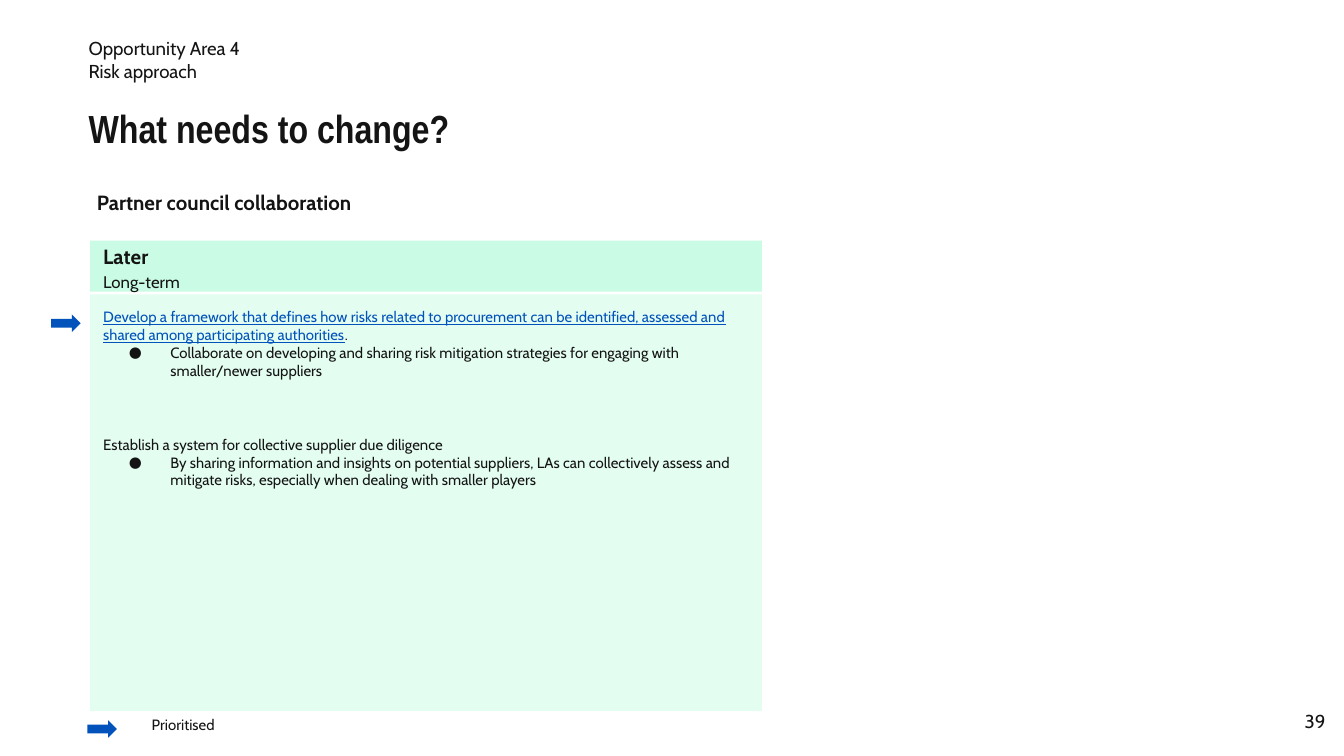
from lxml import etree
from pptx import Presentation
from pptx.dml.color import RGBColor
from pptx.enum.shapes import MSO_SHAPE as Shape
from pptx.enum.text import MSO_ANCHOR as Anchor, PP_ALIGN as Align
from pptx.oxml.ns import qn
from pptx.util import Inches, Pt

COLOURS = {"ink": "141414", "link": "0252BB", "mint": "CAFCE5"}
BODY_FONT, TITLE_FONT = "Cabin", "Arial Narrow"
ACTIONS = [
    ("Develop a framework that defines how risks related to procurement can be "
     "identified, assessed and shared among participating authorities",
     "Collaborate on developing and sharing risk mitigation strategies for "
     "engaging with smaller/newer suppliers", True),
    ("Establish a system for collective supplier due diligence",
     "By sharing information and insights on potential suppliers, LAs can "
     "collectively assess and mitigate risks, especially when dealing with "
     "smaller players", False),
]


def colour(name):
    return RGBColor.from_string(COLOURS[name])


def style(para, size, bold=False, font=BODY_FONT):
    para.font.size, para.font.bold, para.font.name = Pt(size), bold, font
    para.font.color.rgb = colour("ink")


def prepare_frame(box, side=0.1, anchor=Anchor.TOP):
    frame = box.text_frame
    frame.word_wrap = True
    frame.margin_left = frame.margin_right = Inches(side)
    frame.margin_top = frame.margin_bottom = Inches(0.1)
    frame.vertical_anchor = anchor
    return frame


def next_para(frame):
    """Return the empty first paragraph, or a new one."""
    first = frame.paragraphs[0]
    para = first if not first.runs else frame.add_paragraph()
    para.alignment = Align.LEFT
    return para


def add_text(page, left, top, width, height, lines, size, side=0,
             anchor=Anchor.TOP, align=Align.LEFT, **look):
    box = page.shapes.add_textbox(*map(Inches, (left, top, width, height)))
    frame = prepare_frame(box, side, anchor)
    for line in lines:
        para = next_para(frame)
        para.add_run().text = line
        para.alignment = align
        style(para, size, **look)


def add_block(page, kind, left, top, width, height, fill):
    block = page.shapes.add_shape(kind, *map(Inches, (left, top, width, height)))
    block.shadow.inherit = False
    block.fill.solid()
    block.fill.fore_color.rgb = colour(fill)
    block.line.fill.background()
    return block


def add_arrow(page, left, top):
    add_block(page, Shape.RIGHT_ARROW, left, top, 0.22, 0.13, "link")


def set_alpha(block, percent):
    fill = block.fill._xPr.find(qn("a:solidFill"))
    etree.SubElement(fill[0], qn("a:alpha"), val=str(percent * 1000))


def add_bullet(para, size):
    props = para._p.get_or_add_pPr()
    props.set("marL", str(Inches(0.5)))
    props.set("indent", str(Inches(-0.31)))
    tint = etree.SubElement(props, qn("a:buClr"))
    etree.SubElement(tint, qn("a:srgbClr"), val=COLOURS["ink"])
    etree.SubElement(props, qn("a:buSzPts"), val=str(size * 100))
    etree.SubElement(props, qn("a:buFont"), typeface=BODY_FONT)
    etree.SubElement(props, qn("a:buChar"), char="●")


def add_header(page, left, top):
    add_text(page, left, top, 4.73, 0.47, ["Opportunity Area 4", "Risk approach"],
             10, anchor=Anchor.MIDDLE)
    add_text(page, left, top + 0.47, 5.19, 0.5, ["What needs to change?"], 21,
             bold=True, font=TITLE_FONT)
    add_text(page, left + 0.06, top + 1.11, 6.62, 0.37,
             ["Partner council collaboration"], 11, bold=True)


def add_stage(page, left, top, width):
    """Add the stage heading and its panel of actions."""
    heading = add_block(page, Shape.RECTANGLE, left, top, width, 0.38, "mint")
    frame = prepare_frame(heading, anchor=Anchor.MIDDLE)
    for line, size, bold in (("Later", 11, True), ("Long-term", 9, False)):
        para = next_para(frame)
        para.add_run().text = line
        para.line_spacing = 1.15
        style(para, size, bold)

    panel = add_block(page, Shape.RECTANGLE, left, top + 0.4, width, 3.1, "mint")
    set_alpha(panel, 51)
    frame = prepare_frame(panel)
    for index, (action, detail, linked) in enumerate(ACTIONS):
        para = next_para(frame)
        span = para.add_run()
        span.text = action
        if index:
            para.space_before = Pt(30)
        style(para, 8)
        if linked:
            span.font.underline = True
            span.font.color.rgb = colour("link")
            para.add_run().text = "."
            add_arrow(page, left - 0.29, top + 0.55)
        para = next_para(frame)
        para.add_run().text = detail
        add_bullet(para, 8)
        style(para, 8)


def add_footer(page, left, top):
    add_arrow(page, left, top + 0.1)
    add_text(page, left + 0.38, top, 0.81, 0.13, ["Prioritised"], 8, side=0.1)
    add_text(page, 9.36, 5.2, 0.6, 0.43, ["39"], 10, side=0.1, align=Align.RIGHT)


def main():
    deck = Presentation()
    deck.slide_width, deck.slide_height = Inches(10), Inches(10 * 9 / 16)
    page = deck.slides.add_slide(deck.slide_layouts[6])
    add_header(page, 0.66, 0.21)
    add_stage(page, 0.67, 1.79, 5)
    add_footer(page, 0.65, 5.26)
    deck.save("out.pptx")


if __name__ == "__main__":
    main()
